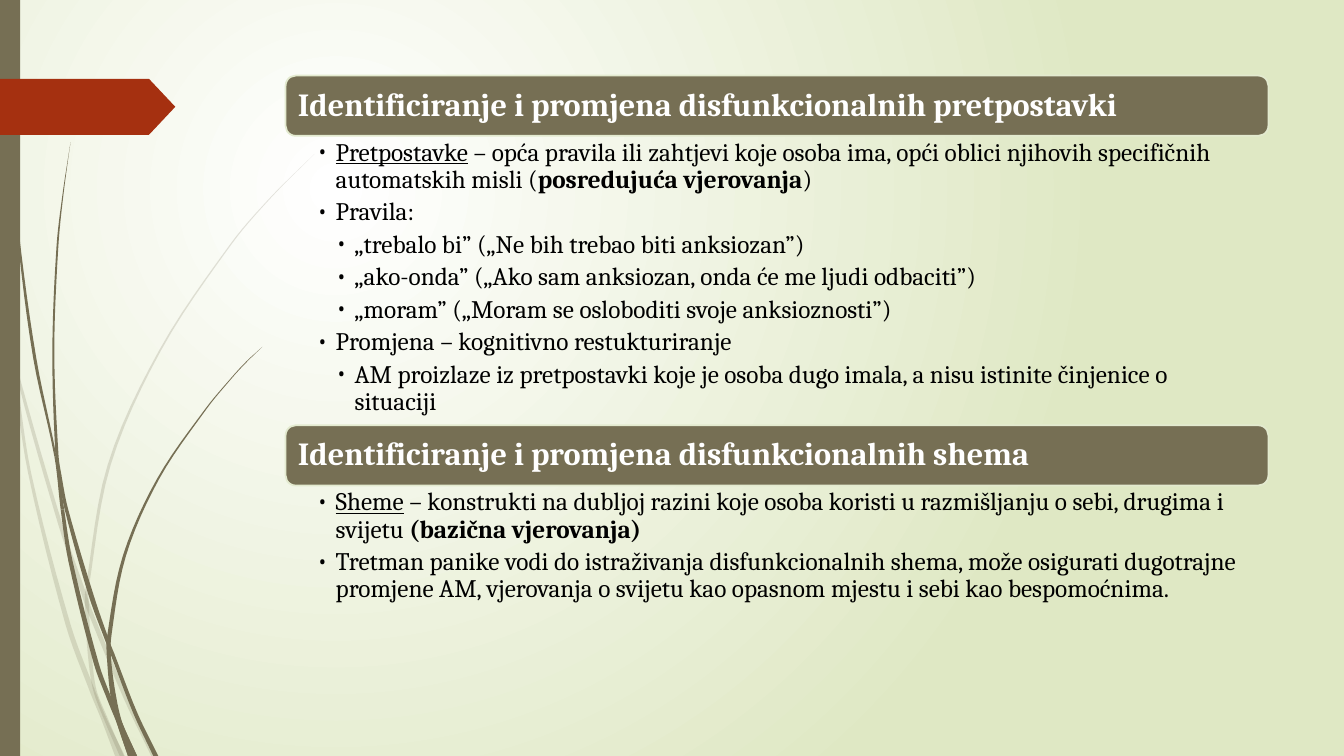
from itertools import accumulate
from math import dist
from lxml.etree import SubElement
from pptx import Presentation
from pptx.dml.color import RGBColor
from pptx.enum.shapes import MSO_SHAPE
from pptx.enum.text import MSO_ANCHOR, PP_ALIGN
from pptx.oxml.ns import qn
from pptx.util import Pt

COLORS = {"olive": "766F54", "red": "A53010", "edge": "E3EACF",
          "white": "FFFFFF", "black": "000000", "green": "DFE8C4"}
FONT = "Cambria"
STEPS = 6

PALE = [
    ((1, 6), [(0, 209, 1), (7.5, 250, 1), (11, 271, 2), (21.2, 338, 2.2),
              (48.6, 446, 3.6), (66.6, 495, 4), (74, 513, 4), (85.7, 540, 7)]),
    ((3, 4), [(10, 248, 0), (13.5, 271, 2), (43.2, 375, 3), (60.2, 425, 3.5),
              (64.4, 437, 3.5), (90, 499, 3.2), (109.8, 540, 3.6)]),
    ((6, 8, 9), [(224.6, 110, 0), (193, 141.5, 0.7), (164.5, 175, 1), (114.5, 250, 1.4),
                 (78, 332, 2.2), (62.3, 420, 2.2), (62, 431, 2.8), (64, 465, 2.9),
                 (67.5, 492, 2.4), (75, 512, 3), (87, 540, 3)]),
]
DARK = [
    ((5, 6, 10), [(2.5, 0, 0.7), (3.2, 34.5, 0.7), (5.4, 79, 0.8), (13, 167.5, 1.4),
                  (24.8, 255.6, 2.2), (39.6, 326, 1.5), (44.6, 364, 2.5), (50.4, 401, 3),
                  (68.8, 474, 3.6), (78.5, 500, 3.5), (86, 518, 4), (94.7, 540, 6.5)]),
    ((5, 8, 9), [(50.4, 101.5, 0), (45, 139, 0.7), (41, 176.5, 1.3), (38.1, 251, 1.4),
                 (40.7, 325, 2.2), (43, 340, 2), (47.5, 364, 2.5), (65.2, 425.5, 3.6),
                 (77.5, 460, 2.8), (80.3, 467, 2.8), (96.5, 509, 3), (111.3, 540, 3.6)]),
    ((6, 8, 9), [(187.5, 247.7, 0), (176.5, 258, 0.7), (166.3, 269, 0.7), (147.2, 292, 1),
                 (113, 342, 1.6), (88.9, 397, 2.2), (78, 455, 3), (78, 472, 2.9),
                 (81.4, 500, 4), (86, 518, 4), (94.7, 540, 6.5)]),
]

TOPICS = [
    (54, 206, "Identificiranje i promjena disfunkcionalnih pretpostavki", [
        (1, [("Pretpostavke", "u"),
             (" – opća pravila ili zahtjevi koje osoba ima, opći oblici njihovih "
              "specifičnih automatskih misli (", ""),
             ("posredujuća vjerovanja", "b"), (")", "")]),
        (1, [("Pravila:", "")]),
        (2, [("„trebalo bi” („Ne bih trebao biti anksiozan”)", "")]),
        (2, [("„ako-onda” („Ako sam anksiozan, onda će me ljudi odbaciti”)", "")]),
        (2, [("„moram” („Moram se osloboditi svoje anksioznosti”)", "")]),
        (1, [("Promjena – kognitivno restukturiranje", "")]),
        (2, [("AM proizlaze iz pretpostavki koje je osoba dugo imala, "
              "a nisu istinite činjenice o situaciji", "")]),
    ]),
    (303.8, 106.5, "Identificiranje i promjena disfunkcionalnih shema", [
        (1, [("Sheme", "u"),
             (" – konstrukti na dubljoj razini koje osoba koristi u razmišljanju "
              "o sebi, drugima i svijetu ", ""),
             ("(bazična vjerovanja)", "b")]),
        (1, [("Tretman panike vodi do istraživanja disfunkcionalnih shema, može "
              "osigurati dugotrajne promjene AM, vjerovanja o svijetu kao opasnom "
              "mjestu i sebi kao bespomoćnima.", "")]),
    ]),
]


def tint(name):
    """Return the named colour."""
    return RGBColor.from_string(COLORS[name])


def paint(shape, name):
    """Give a shape a flat fill without line or shadow."""
    shape.shadow.inherit = False
    shape.fill.solid()
    shape.fill.fore_color.rgb = tint(name)
    shape.line.fill.background()


def style(para, size, name):
    """Set the font and line spacing of a paragraph."""
    para.font.name = FONT
    para.font.size = Pt(size)
    para.font.color.rgb = tint(name)
    para.line_spacing = 0.9
    para.alignment = PP_ALIGN.LEFT


def pad(frame, left, top, right):
    """Set the insets of a wrapping text frame."""
    frame.word_wrap = True
    frame.margin_left, frame.margin_right = Pt(left), Pt(right)
    frame.margin_top = frame.margin_bottom = Pt(top)


def smooth(knots):
    """Run a curve through the knots, with slopes set by chord length."""
    last = len(knots) - 1
    at = list(accumulate(map(dist, knots, knots[1:]), initial=0))
    slopes = []
    for i in range(last + 1):
        low, high = max(i - 1, 0), min(i + 1, last)
        slopes.append([(b - a) / (at[high] - at[low])
                       for a, b in zip(knots[low], knots[high])])
    curve = []
    for i in range(last):
        span = at[i + 1] - at[i]
        for step in range(STEPS):
            t = step / STEPS
            curve.append([a + (b - a) * t * t * (3 - 2 * t)
                          + span * t * (1 - t) * (m * (1 - t) - n * t)
                          for a, b, m, n in zip(knots[i], knots[i + 1],
                                                slopes[i], slopes[i + 1])])
    return curve + [knots[-1]]


def blade(slide, cuts, knots, alpha):
    """Draw one tapering blade of grass, jointed at the cut knots."""
    curve = smooth(knots)
    ends = [0, *cuts, len(knots) - 1]
    for start, stop in zip(ends, ends[1:]):
        part = curve[start * STEPS:stop * STEPS + 1]
        left = [(Pt(x - w / 2), Pt(y)) for x, y, w in part]
        right = [(Pt(x + w / 2), Pt(y)) for x, y, w in part]
        ring = left + right[::-1]
        form = slide.shapes.build_freeform(*ring[0])
        form.add_line_segments(ring[1:], close=True)
        shape = form.convert_to_shape()
        paint(shape, "olive")
        if alpha < 100:
            color = shape._element.spPr.find(".//" + qn("a:srgbClr"))
            SubElement(color, qn("a:alpha"), val=str(alpha * 1000))


def backdrop(slide):
    """Fill the background with a round gradient."""
    fill = slide.background.fill
    fill.gradient()
    for stop, name in zip(fill.gradient_stops, ("white", "green")):
        stop.color.rgb = tint(name)
    grad = slide._element.find(".//" + qn("a:gradFill"))
    grad.remove(grad.find(qn("a:lin")))
    ring = SubElement(grad, qn("a:path"), path="circle")
    SubElement(ring, qn("a:fillToRect"), l="50000", t="50000", r="100000", b="100000")


def side(slide, height):
    """Draw the grass, the side bar and the red tag."""
    for group, alpha in ((PALE, 20), (DARK, 100)):
        for cuts, knots in group:
            blade(slide, cuts, knots, alpha)
    bar = slide.shapes.add_shape(MSO_SHAPE.RECTANGLE, 0, 0, Pt(14.4), Pt(height))
    paint(bar, "olive")
    tag = slide.shapes.add_shape(MSO_SHAPE.PENTAGON, 0, Pt(56.3), Pt(125.2), Pt(40))
    tag.adjustments[0] = 0.47
    paint(tag, "red")


def header(slide, text, left, top, width, height):
    """Draw a rounded title bar."""
    bar = slide.shapes.add_shape(MSO_SHAPE.ROUNDED_RECTANGLE,
                                 Pt(left), Pt(top), Pt(width), Pt(height))
    paint(bar, "olive")
    bar.line.color.rgb = tint("edge")
    bar.line.width = Pt(1.25)
    frame = bar.text_frame
    pad(frame, 6.7, 7.2, 6.7)
    frame.vertical_anchor = MSO_ANCHOR.MIDDLE
    para = frame.paragraphs[0]
    para.text = text
    style(para, 23, "white")
    para.font.bold = True


def points(slide, items, left, top, width, height):
    """Write a bulleted list on two levels."""
    box = slide.shapes.add_textbox(Pt(left), Pt(top), Pt(width), Pt(height))
    frame = box.text_frame
    pad(frame, 22.3, 2.6, 13)
    for index, (level, runs) in enumerate(items):
        para = frame.add_paragraph() if index else frame.paragraphs[0]
        style(para, 18, "black")
        para.level, para.space_after = level, Pt(3.7)
        props = para._p.get_or_add_pPr()
        props.set("marL", str(Pt(13.5 * level)))
        props.set("indent", str(Pt(-13.5)))
        base = props.find(qn("a:defRPr"))
        base.addprevious(SubElement(props, qn("a:buFont"), typeface=FONT))
        base.addprevious(SubElement(props, qn("a:buChar"), char="•"))
        for text, look in runs:
            run = para.add_run()
            run.text = text
            run.font.bold = True if look == "b" else None
            run.font.underline = True if look == "u" else None


def main():
    """Build and save the slide."""
    deck = Presentation()
    deck.slide_width, deck.slide_height = Pt(960), Pt(540)
    slide = deck.slides.add_slide(deck.slide_layouts[6])
    backdrop(slide)
    side(slide, 540)
    left, width, bar = 204, 702, 43
    for top, height, title, items in TOPICS:
        header(slide, title, left, top, width, bar)
        points(slide, items, left, top + bar, width, height)
    deck.save("out.pptx")


if __name__ == "__main__":
    main()
